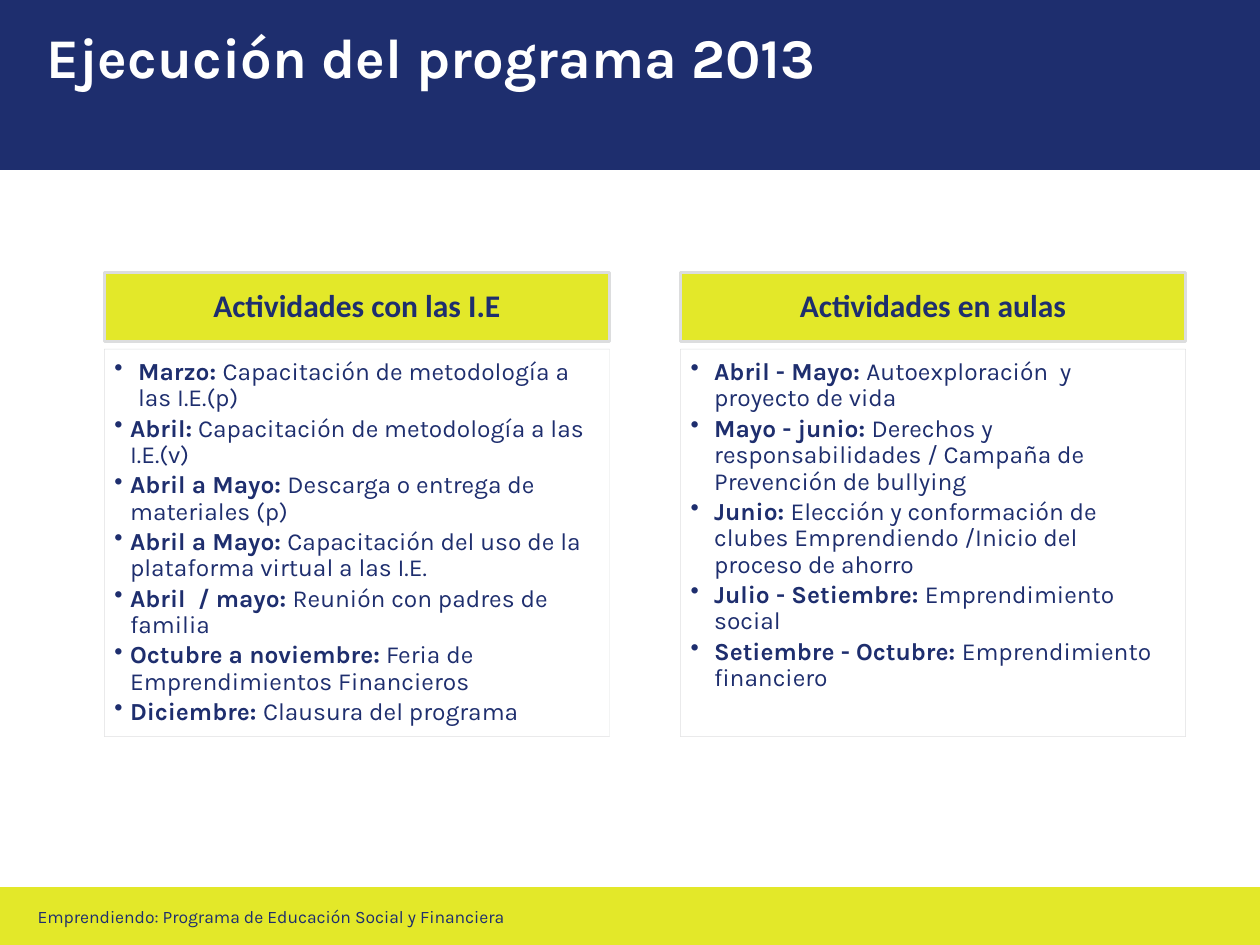
from dataclasses import dataclass
from typing import Optional

from lxml import etree
from pptx import Presentation
from pptx import util as u
from pptx.dml.color import RGBColor
from pptx.enum import shapes, text
from pptx.oxml import ns

Pt = u.Pt


@dataclass(frozen=True)
class Theme:
    navy: str = "1E2E6E"
    lime: str = "E3E829"
    gray: str = "DCDDDE"
    white: str = "FFFFFF"
    body_font: str = "Karla"
    head_font: str = "Calibri"
    title_size: float = 32
    head_size: float = 18
    body_size: float = 14
    footer_size: float = 10


@dataclass(frozen=True)
class Box:
    x: float
    y: float
    w: float
    h: float


@dataclass(frozen=True)
class Activity:
    when: str
    what: str
    indent: float = 13.5


@dataclass(frozen=True)
class Column:
    x: float
    heading: str
    activities: tuple[Activity, ...]


T = Theme()
SLIDE_W, SLIDE_H = 720, 540
COLUMN_W = 288.72
HEAD_Y, HEAD_H = 155.6, 39.6
BODY_Y, BODY_H = 199.5, 221.4
TIGHT = 8.9

COLUMNS = (
    Column(59.6, "Actividades con las I.E", (
        Activity("Marzo: ", "Capacitación de metodología a las I.E.(p)"),
        Activity("Abril:", " Capacitación de metodología a las I.E.(v)", TIGHT),
        Activity("Abril a Mayo: ", "Descarga o entrega de materiales (p)", TIGHT),
        Activity("Abril a Mayo: ",
                 "Capacitación del uso de la plataforma virtual a las I.E.", TIGHT),
        Activity("Abril  / mayo: ", "Reunión con padres de familia", TIGHT),
        Activity("Octubre a noviembre:", " Feria de Emprendimientos Financieros", TIGHT),
        Activity("Diciembre: ", "Clausura del programa", TIGHT),
    )),
    Column(388.8, "Actividades en aulas", (
        Activity("Abril - Mayo: ", "Autoexploración  y proyecto de vida"),
        Activity("Mayo - junio: ",
                 "Derechos y responsabilidades / Campaña de Prevención de bullying"),
        Activity("Junio: ",
                 "Elección y conformación de clubes Emprendiendo /Inicio del proceso de ahorro"),
        Activity("Julio - Setiembre: ", "Emprendimiento social"),
        Activity("Setiembre - Octubre: ", "Emprendimiento financiero"),
    )),
)


def add_run(p, content: str, size: float, color: str = T.navy,
            font: str = T.body_font, bold: bool = False) -> None:
    r = p.add_run()
    r.text = content
    r.font.size = Pt(size)
    r.font.name = font
    r.font.bold = bold
    r.font.color.rgb = RGBColor.from_string(color)


def add_rect(s, box: Box, fill: Optional[str], line: str, weight: float = 2):
    sp = s.shapes.add_shape(shapes.MSO_SHAPE.RECTANGLE,
                            Pt(box.x), Pt(box.y), Pt(box.w), Pt(box.h))
    sp.shadow.inherit = False
    if fill:
        sp.fill.solid()
        sp.fill.fore_color.rgb = RGBColor.from_string(fill)
    else:
        sp.fill.background()
    sp.line.color.rgb = RGBColor.from_string(line)
    sp.line.width = Pt(weight)
    return sp


def add_label(s, box: Box, content: str, size: float, color: str,
              bold: bool = False, wrap: bool = True) -> None:
    sp = s.shapes.add_textbox(Pt(box.x), Pt(box.y), Pt(box.w), Pt(box.h))
    tf = sp.text_frame
    tf.word_wrap = wrap
    tf.auto_size = text.MSO_AUTO_SIZE.SHAPE_TO_FIT_TEXT
    add_run(tf.paragraphs[0], content, size, color, bold=bold)


def set_insets(tf, left: float, top: float, right: float, bottom: float) -> None:
    tf.word_wrap = True
    tf.margin_left, tf.margin_top = Pt(left), Pt(top)
    tf.margin_right, tf.margin_bottom = Pt(right), Pt(bottom)


def add_bullet(p, indent: float) -> None:
    pPr = p._p.get_or_add_pPr()
    pPr.set("marL", str(Pt(indent)))
    pPr.set("indent", str(-Pt(indent)))
    etree.SubElement(pPr, ns.qn("a:buChar")).set("char", "•")


def draw_heading(s, column: Column) -> None:
    sp = add_rect(s, Box(column.x, HEAD_Y, COLUMN_W, HEAD_H), T.lime, T.gray)
    tf = sp.text_frame
    set_insets(tf, 10, 5.8, 10, 5.8)
    tf.vertical_anchor = text.MSO_ANCHOR.MIDDLE
    p = tf.paragraphs[0]
    p.alignment = text.PP_ALIGN.CENTER
    p.line_spacing = 0.9
    add_run(p, column.heading, T.head_size, font=T.head_font, bold=True)


def draw_activities(s, column: Column) -> None:
    sp = add_rect(s, Box(column.x, BODY_Y, COLUMN_W, BODY_H), None, T.gray, 0.25)
    line_color = sp.line._ln.find(".//" + ns.qn("a:srgbClr"))
    etree.SubElement(line_color, ns.qn("a:alpha")).set("val", "90000")
    tf = sp.text_frame
    set_insets(tf, 5.8, 5.8, 7.9, 8.6)
    tf.vertical_anchor = text.MSO_ANCHOR.TOP
    for i, activity in enumerate(column.activities):
        p = tf.add_paragraph() if i else tf.paragraphs[0]
        add_bullet(p, activity.indent)
        p.level = 1
        p.alignment = text.PP_ALIGN.LEFT
        p.line_spacing = 0.9
        p.space_after = Pt(2.1)
        add_run(p, activity.when, T.body_size, bold=True)
        add_run(p, activity.what, T.body_size)


def main() -> None:
    prs = Presentation()
    prs.slide_width, prs.slide_height = Pt(SLIDE_W), Pt(SLIDE_H)
    s = prs.slides.add_slide(prs.slide_layouts[6])

    # Footer and header bands
    add_rect(s, Box(0, 508, SLIDE_W, 32), T.lime, T.lime)
    add_rect(s, Box(0, 0, SLIDE_W, 96.3), T.navy, T.navy)
    add_label(s, Box(14.4, 514, 287.3, 19.4),
              "Emprendiendo: Programa de Educación Social y Financiera",
              T.footer_size, T.navy, wrap=False)
    add_label(s, Box(19.4, 9.4, 481.7, 46), "Ejecución del programa 2013",
              T.title_size, T.white, bold=True)

    # Activity columns
    for column in COLUMNS:
        draw_heading(s, column)
        draw_activities(s, column)

    prs.save("out.pptx")


if __name__ == "__main__":
    main()
